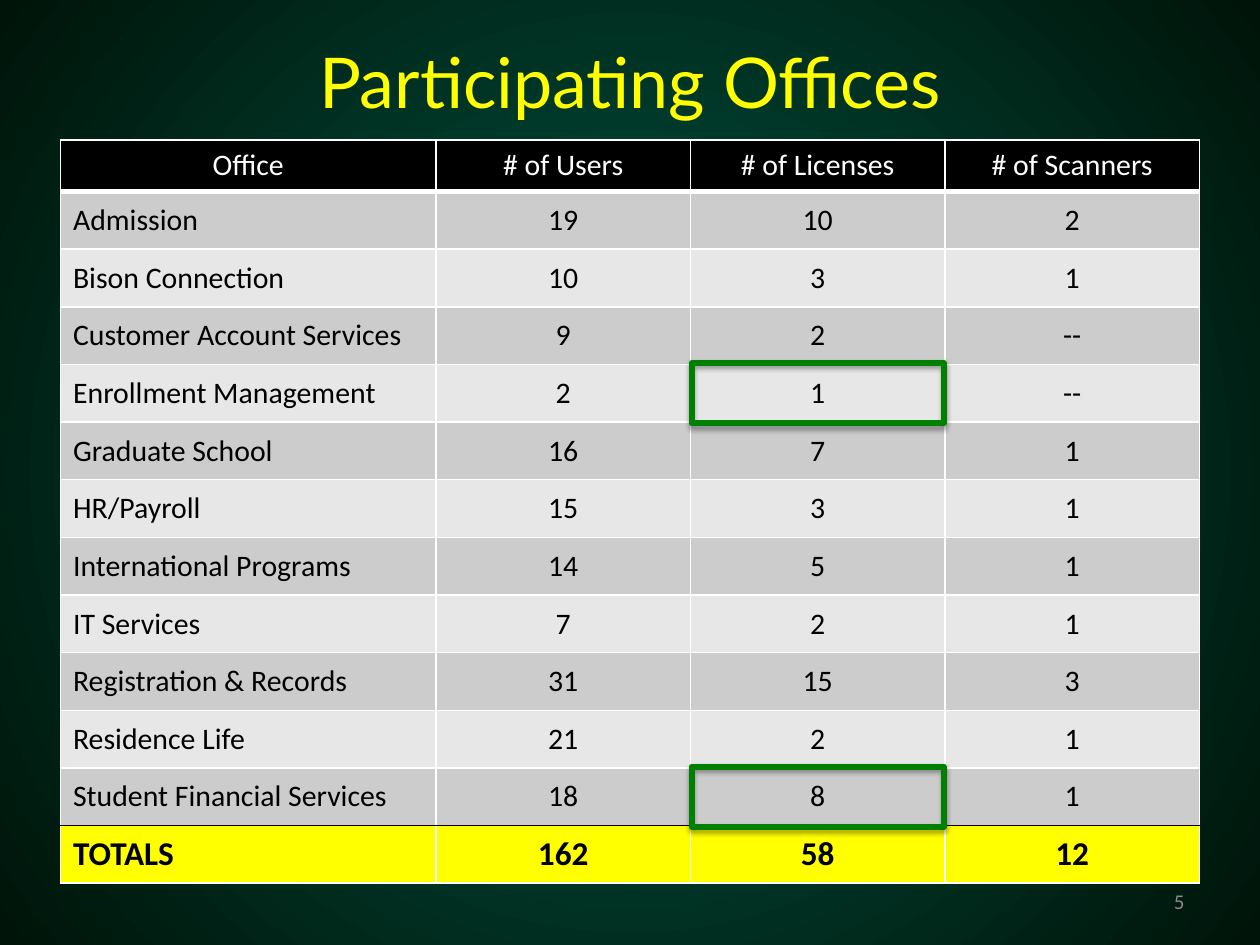
"""Build the Participating Offices slide with its table of users, licenses and scanners."""
from pptx import Presentation
from pptx.dml.color import RGBColor
from pptx.enum.shapes import MSO_SHAPE as Shape
from pptx.enum.text import MSO_ANCHOR as Anchor, PP_ALIGN as Align
from pptx.oxml import parse_xml
from pptx.oxml.ns import nsdecls
from pptx.util import Inches, Pt

TITLE = "Participating Offices"
PAGE_NUMBER = "5"
ROWS = [
    ("Office", "# of Users", "# of Licenses", "# of Scanners"),
    ("Admission", "19", "10", "2"),
    ("Bison Connection", "10", "3", "1"),
    ("Customer Account Services", "9", "2", "--"),
    ("Enrollment Management", "2", "1", "--"),
    ("Graduate School", "16", "7", "1"),
    ("HR/Payroll", "15", "3", "1"),
    ("International Programs", "14", "5", "1"),
    ("IT Services", "7", "2", "1"),
    ("Registration & Records", "31", "15", "3"),
    ("Residence Life", "21", "2", "1"),
    ("Student Financial Services", "18", "8", "1"),
    ("TOTALS", "162", "58", "12"),
]
HIGHLIGHTED_OFFICES = ("Enrollment Management", "Student Financial Services")
LICENSE_COLUMN = 2

BLACK = RGBColor(0x00, 0x00, 0x00)
WHITE = RGBColor(0xFF, 0xFF, 0xFF)
YELLOW = RGBColor(0xFF, 0xFF, 0x00)
GREEN = RGBColor(0x00, 0x80, 0x00)
MUTED = RGBColor(0x89, 0x89, 0x89)
BANDS = (RGBColor(0xE7, 0xE7, 0xE7), RGBColor(0xCC, 0xCC, 0xCC))
GLOW = RGBColor(0x00, 0x56, 0x43)
DARK = RGBColor(0x00, 0x14, 0x09)

LEFT, TOP, WIDTH, HEIGHT = 0.48, 1.11, 9.04, 5.9
COUNT_WIDTH = 2.02
COLUMN_WIDTHS = [WIDTH - 3 * COUNT_WIDTH] + [COUNT_WIDTH] * 3
HEADER_HEIGHT = 0.41
ROW_HEIGHT = (HEIGHT - HEADER_HEIGHT) / (len(ROWS) - 1)
LAST = len(ROWS) - 1


def style(para, font_name, size, color, align, bold=False):
    para.alignment = align
    font = para.font
    font.name, font.size, font.bold = font_name, Pt(size), bold
    font.color.rgb = color


def paint_background(slide):
    slide.element.cSld.insert(0, parse_xml(
        f'<p:bg {nsdecls("p", "a")}><p:bgPr><a:gradFill rotWithShape="1"><a:gsLst>'
        f'<a:gs pos="2000"><a:srgbClr val="{GLOW}"/></a:gs>'
        f'<a:gs pos="100000"><a:srgbClr val="{DARK}"/></a:gs></a:gsLst>'
        '<a:path path="circle"><a:fillToRect l="50000" t="50000" r="50000" b="50000"/></a:path>'
        '</a:gradFill><a:effectLst/></p:bgPr></p:bg>'))


def add_label(slide, area, text, **look):
    box = slide.shapes.add_textbox(*map(Inches, area))
    frame = box.text_frame
    frame.word_wrap = True
    frame.vertical_anchor = Anchor.MIDDLE
    frame.text = text
    style(frame.paragraphs[0], **look)


def set_borders(cell, row):
    borders = {"L": (WHITE, 1), "R": (WHITE, 1), "T": (WHITE, 1), "B": (WHITE, 1)}
    if row == 0:
        borders["B"] = (WHITE, 3)
    elif row == LAST - 1:
        borders["B"] = (BLACK, 1)
    elif row == LAST:
        borders["T"] = (BLACK, 1)
    properties = cell._tc.get_or_add_tcPr()
    for position, (side, (color, width)) in enumerate(borders.items()):
        properties.insert(position, parse_xml(
            f'<a:ln{side} {nsdecls("a")} w="{Pt(width)}"><a:solidFill>'
            f'<a:srgbClr val="{color}"/></a:solidFill></a:ln{side}>'))


def row_look(row):
    if row == 0:
        return BLACK, WHITE, 17
    if row == LAST:
        return YELLOW, BLACK, 19
    return BANDS[row % 2], BLACK, 17


def add_office_table(slide):
    area = map(Inches, (LEFT, TOP, WIDTH, HEIGHT))
    table = slide.shapes.add_table(len(ROWS), len(COLUMN_WIDTHS), *area).table
    for column, width in zip(table.columns, COLUMN_WIDTHS):
        column.width = Inches(width)
    for row, values in enumerate(ROWS):
        table.rows[row].height = Inches(ROW_HEIGHT if row else HEADER_HEIGHT)
        fill, color, size = row_look(row)
        for column, value in enumerate(values):
            cell = table.cell(row, column)
            cell.text = value
            cell.vertical_anchor = Anchor.MIDDLE
            cell.fill.solid()
            cell.fill.fore_color.rgb = fill
            set_borders(cell, row)
            align = Align.LEFT if row and not column else Align.CENTER
            style(cell.text_frame.paragraphs[0], "Calibri", size, color, align, row == LAST)


def add_highlight(slide, row):
    width, height = 2, 0.48
    left = LEFT + sum(COLUMN_WIDTHS[:LICENSE_COLUMN]) + (COUNT_WIDTH - width) / 2
    top = TOP + HEADER_HEIGHT + (row - 0.5) * ROW_HEIGHT - height / 2
    frame = slide.shapes.add_shape(Shape.RECTANGLE, *map(Inches, (left, top, width, height)))
    frame.fill.background()
    frame.line.color.rgb = GREEN
    frame.line.width = Pt(3.5)
    frame.element.spPr.append(parse_xml(
        f'<a:effectLst {nsdecls("a")}><a:outerShdw blurRad="{Pt(3.1)}" dist="{Pt(1.8)}" '
        f'dir="5400000" rotWithShape="0"><a:srgbClr val="{BLACK}"><a:alpha val="35000"/>'
        '</a:srgbClr></a:outerShdw></a:effectLst>'))


def main():
    deck = Presentation()
    deck.slide_width, deck.slide_height = Inches(10), Inches(7.5)
    slide = deck.slides.add_slide(deck.slide_layouts[6])
    paint_background(slide)
    add_label(slide, (0.5, 0.25, 9, 0.78), TITLE,
              font_name="Lato", size=40, color=YELLOW, align=Align.CENTER)
    add_label(slide, (7.17, 6.95, 2.33, 0.4), PAGE_NUMBER,
              font_name="Calibri", size=12, color=MUTED, align=Align.RIGHT)
    add_office_table(slide)
    offices = [values[0] for values in ROWS]
    for office in HIGHLIGHTED_OFFICES:
        add_highlight(slide, offices.index(office))
    deck.save("out.pptx")


if __name__ == "__main__":
    main()
